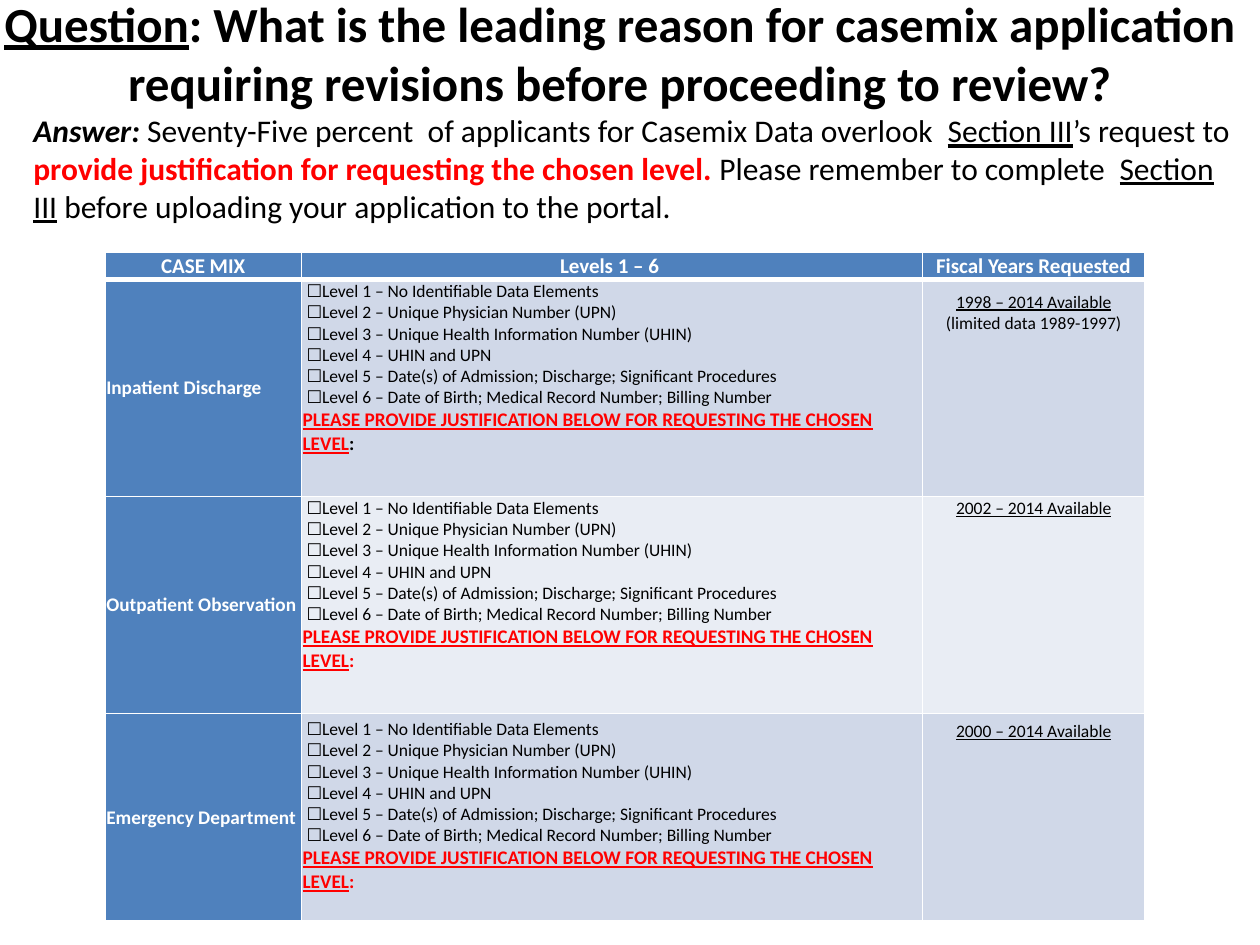
from dataclasses import dataclass

from lxml.etree import SubElement
from pptx import Presentation
from pptx.dml.color import RGBColor
from pptx.enum.text import MSO_ANCHOR, PP_ALIGN
from pptx.oxml.ns import qn
from pptx.util import Pt


@dataclass(frozen=True)
class Theme:
    font: str = "Calibri"
    black: str = "000000"
    white: str = "FFFFFF"
    red: str = "FF0000"
    blue: str = "4F81BD"
    bands: tuple = ("D0D8E8", "E9EDF4")
    title: int = 28
    answer: int = 18
    header: int = 12
    label: int = 11
    body: int = 10


THEME = Theme()

# Content: a span is its text and a set of marks (b, i, u, red)
QUESTION = [
    ("Question", "bu"),
    (": What is the leading reason for casemix application requiring "
     "revisions before proceeding to review?", "b"),
]
ANSWER = [
    ("Answer: ", "bi"),
    ("Seventy-Five percent  of applicants for Casemix Data overlook  ", ""),
    ("Section III", "u"),
    ("’s request to ", ""),
    ("provide justification for requesting the chosen level. ", "b red"),
    ("Please remember to complete  ", ""),
    ("Section III", "u"),
    (" before uploading your application to the portal.", ""),
]
HEADERS = ["CASE MIX", "Levels 1 – 6 ", "Fiscal Years Requested"]
LEVELS = [
    "No Identifiable Data Elements",
    "Unique Physician Number (UPN)",
    "Unique Health Information Number (UHIN)",
    "UHIN and UPN",
    "Date(s) of Admission; Discharge; Significant Procedures",
    "Date of Birth; Medical Record Number; Billing Number",
]
REQUEST = "PLEASE PROVIDE JUSTIFICATION BELOW FOR REQUESTING THE CHOSEN LEVEL"
# Name, marks of the closing colon, years, limits, top margins of levels and years
DATASETS = [
    ("Inpatient Discharge", "b", "1998 – 2014 Available",
     ["(limited data 1989-1997)"], 0.72, 6.7),
    ("Outpatient Observation", "b red", "2002 – 2014 Available", [], 0.72, 0.72),
    ("Emergency Department", "b red", "2000 – 2014 Available", [], 3.1, 4.2),
]

# Layout in points
QUESTION_BOX = (-54, 12, 816, 36)
ANSWER_BOX = (12, 60, 702, 73)
TABLE_ORIGIN = (60, 144)
COLUMNS = [112.2, 355, 126.8]
ROWS = [15.6, 124, 124, 118.5]
CELL_MARGIN = 0.72


def write(paragraph, spans, size, color=THEME.black, align=PP_ALIGN.LEFT):
    paragraph.alignment = align
    for text, marks in spans:
        span = paragraph.add_run()
        span.text = text
        flags = marks.replace("red", "")
        font = span.font
        font.name, font.size = THEME.font, Pt(size)
        font.bold, font.italic, font.underline = (flag in flags for flag in "biu")
        font.color.rgb = RGBColor.from_string(THEME.red if "red" in marks else color)


def add_text(page, place, spans, size, align, anchor):
    box = page.shapes.add_textbox(*map(Pt, place))
    frame = box.text_frame
    frame.word_wrap = True
    frame.vertical_anchor = anchor
    write(frame.paragraphs[0], spans, size, align=align)


def add_border(cell, side, width):
    line = SubElement(cell._tc.get_or_add_tcPr(), qn(f"a:{side}"), w=str(Pt(width)))
    fill = SubElement(line, qn("a:solidFill"))
    SubElement(fill, qn("a:srgbClr"), val=THEME.white)


def fill_cell(cell, fill, paragraphs, align=PP_ALIGN.LEFT, color=THEME.black,
              anchor=MSO_ANCHOR.MIDDLE, top=CELL_MARGIN, bottom_line=1):
    """Paragraphs are (spans, size) pairs."""
    cell.margin_left = cell.margin_right = cell.margin_bottom = Pt(CELL_MARGIN)
    cell.margin_top = Pt(top)
    cell.vertical_anchor = anchor
    for side in ("lnL", "lnR", "lnT"):
        add_border(cell, side, 1)
    add_border(cell, "lnB", bottom_line)
    cell.fill.solid()
    cell.fill.fore_color.rgb = RGBColor.from_string(fill)
    frame = cell.text_frame
    for index, (spans, size) in enumerate(paragraphs):
        paragraph = frame.add_paragraph() if index else frame.paragraphs[0]
        write(paragraph, spans, size, color, align)


def add_levels_table(page):
    shape = page.shapes.add_table(len(ROWS), len(COLUMNS), *map(Pt, TABLE_ORIGIN),
                                  Pt(sum(COLUMNS)), Pt(sum(ROWS)))
    table = shape.table
    for column, width in zip(table.columns, COLUMNS):
        column.width = Pt(width)
    for row, height in zip(table.rows, ROWS):
        row.height = Pt(height)

    # Header row
    for column, text in enumerate(HEADERS):
        fill_cell(table.cell(0, column), THEME.blue, [([(text, "b")], THEME.header)],
                  PP_ALIGN.CENTER, THEME.white, bottom_line=3)

    # One row per dataset
    levels = [([(f" ☐Level {number} – {text}", "")], THEME.body)
              for number, text in enumerate(LEVELS, 1)]
    for row, dataset in enumerate(DATASETS, 1):
        name, colon, years, limits, levels_top, years_top = dataset
        band = THEME.bands[(row - 1) % 2]
        request = ([(REQUEST, "bu red"), (":", colon)], THEME.label)
        available = [([(years, "u")], THEME.body)]
        available += [([(limit, "")], THEME.body) for limit in limits]
        fill_cell(table.cell(row, 0), THEME.blue, [([(name, "b")], THEME.label)],
                  color=THEME.white)
        fill_cell(table.cell(row, 1), band, levels + [request],
                  anchor=MSO_ANCHOR.TOP, top=levels_top)
        fill_cell(table.cell(row, 2), band, available, PP_ALIGN.CENTER,
                  anchor=MSO_ANCHOR.TOP, top=years_top)


def main():
    deck = Presentation()
    deck.slide_width, deck.slide_height = Pt(720), Pt(540)
    page = deck.slides.add_slide(deck.slide_layouts[6])
    add_text(page, QUESTION_BOX, QUESTION, THEME.title, PP_ALIGN.CENTER, MSO_ANCHOR.MIDDLE)
    add_text(page, ANSWER_BOX, ANSWER, THEME.answer, PP_ALIGN.LEFT, MSO_ANCHOR.TOP)
    add_levels_table(page)
    deck.save("out.pptx")


if __name__ == "__main__":
    main()
